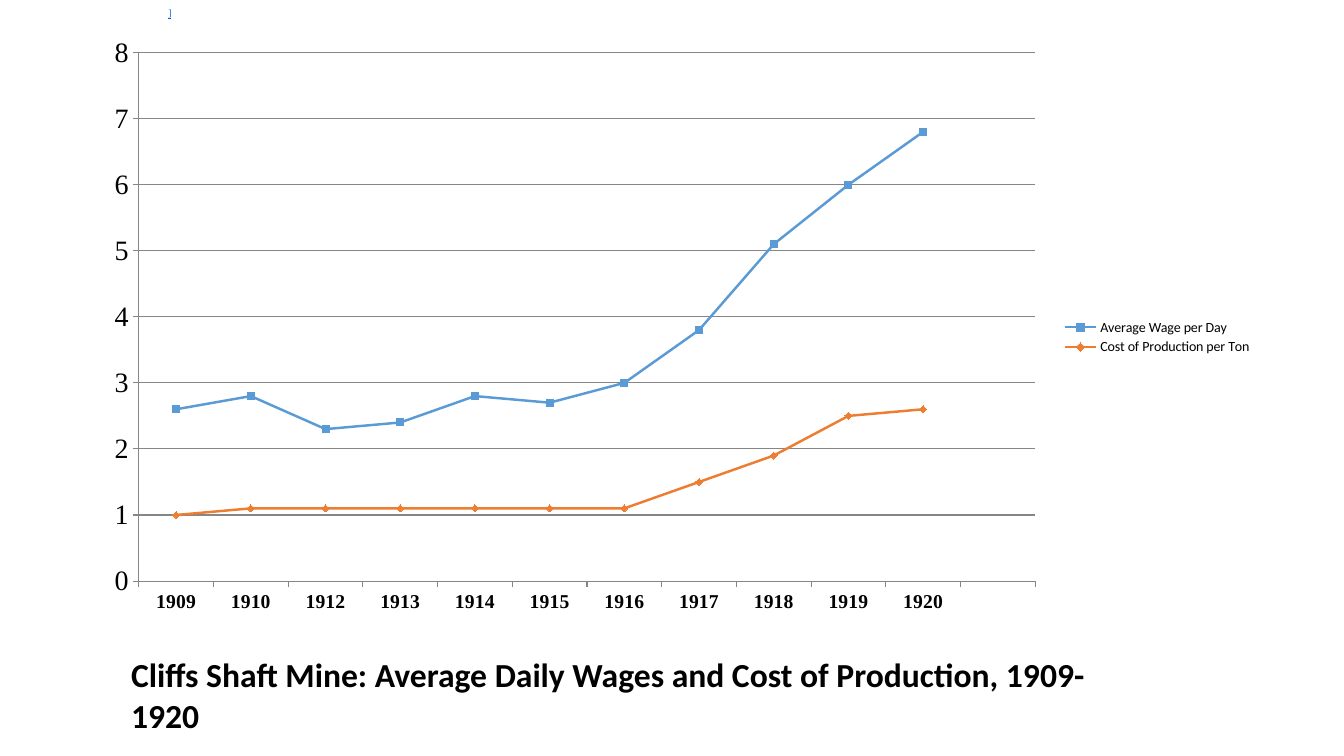
from lxml import etree
from pptx import Presentation
from pptx.chart.data import CategoryChartData
from pptx.dml.color import RGBColor
from pptx.enum.chart import XL_CHART_TYPE, XL_LEGEND_POSITION, XL_MARKER_STYLE, XL_TICK_MARK
from pptx.enum.text import MSO_ANCHOR, MSO_AUTO_SIZE, PP_ALIGN
from pptx.oxml.ns import qn
from pptx.util import Inches, Pt

LINE_MARKERS = XL_CHART_TYPE.LINE_MARKERS
LEGEND_RIGHT = XL_LEGEND_POSITION.RIGHT
SQUARE, DIAMOND = XL_MARKER_STYLE.SQUARE, XL_MARKER_STYLE.DIAMOND
TICK_OUTSIDE, TICK_NONE = XL_TICK_MARK.OUTSIDE, XL_TICK_MARK.NONE
TOP, MIDDLE = MSO_ANCHOR.TOP, MSO_ANCHOR.MIDDLE
LEFT = PP_ALIGN.LEFT
NO_AUTOFIT = MSO_AUTO_SIZE.NONE

COLORS = {
    name: RGBColor.from_string(value)
    for name, value in {
        "text": "000000",
        "link": "0563C1",
        "grid": "868686",
        "wage": "5B9BD5",
        "cost": "ED7D31",
    }.items()
}
SANS, SERIF = "Calibri", "Times New Roman"
YEARS = ["1909", *(str(year) for year in range(1912 - 2, 1921) if year != 1911), ""]
SERIES = [
    ("Average Wage per Day", "wage", SQUARE,
     [2.6, 2.8, 2.3, 2.4, 2.8, 2.7, 3, 3.8, 5.1, 6, 6.8, None]),
    ("Cost of Production per Ton", "cost", DIAMOND,
     [1, 1.1, 1.1, 1.1, 1.1, 1.1, 1.1, 1.5, 1.9, 2.5, 2.6, None]),
]
PLOT_LAYOUT = [
    ("layoutTarget", "inner"), ("xMode", "edge"), ("yMode", "edge"),
    ("x", 0.05), ("y", 0.044), ("w", 0.758), ("h", 0.847),
]


def set_font(font, name, size, color="text", bold=False):
    font.name = name
    font.size = Pt(size)
    font.bold = bold
    font.color.rgb = COLORS[color]


deck = Presentation()
deck.slide_width, deck.slide_height = Inches(13.33), Inches(7.5)
page = deck.slides.add_slide(deck.slide_layouts.get_by_name("Title Only"))

# Raised bracket at the top edge
box = page.shapes.add_textbox(Inches(1.67), 0, Inches(0.05), Inches(0.3))
frame = box.text_frame
frame.margin_left = frame.margin_right = frame.margin_top = frame.margin_bottom = 0
frame.vertical_anchor = MIDDLE
frame.word_wrap = False
span = frame.paragraphs[0].add_run()
span.text = "]"
set_font(span.font, SERIF, 12, "link")
span.font.underline = True
span.font._element.set("baseline", "30000")

# Line chart
data = CategoryChartData()
data.categories = YEARS
for name, _, _, values in SERIES:
    data.add_series(name, values)
chart = page.shapes.add_chart(
    LINE_MARKERS, Inches(0.79), Inches(0.25), Inches(11.73), Inches(6.19), data
).chart
set_font(chart.font, SANS, 10)
chart.has_title = False
chart.has_legend = True
chart.legend.position = LEGEND_RIGHT
chart.legend.include_in_layout = False
chart.plots[0].vary_by_categories = False

for series, (_, color, marker_style, _) in zip(chart.plots[0].series, SERIES):
    series.smooth = False
    series.format.line.width = Pt(1.75)
    series.format.line.color.rgb = COLORS[color]
    marker = series.marker
    marker.style = marker_style
    marker.size = 5
    marker.format.fill.solid()
    marker.format.fill.fore_color.rgb = COLORS[color]
    marker.format.line.color.rgb = COLORS[color]

value_axis, year_axis = chart.value_axis, chart.category_axis
value_axis.minimum_scale, value_axis.maximum_scale = 0, 8
value_axis.major_unit = 1
value_axis.has_major_gridlines = True
set_font(value_axis.tick_labels.font, SERIF, 20)
set_font(year_axis.tick_labels.font, SERIF, 14, bold=True)
for axis in (value_axis, year_axis):
    axis.major_tick_mark = TICK_OUTSIDE
    axis.minor_tick_mark = TICK_NONE
for ruled in (value_axis, year_axis, value_axis.major_gridlines):
    ruled.format.line.width = Pt(0.75)
    ruled.format.line.color.rgb = COLORS["grid"]

plot_area = chart._chartSpace.chart.plotArea
for old_layout in plot_area.findall(qn("c:layout")):
    plot_area.remove(old_layout)
layout = etree.Element(qn("c:layout"))
manual = etree.SubElement(layout, qn("c:manualLayout"))
for tag, value in PLOT_LAYOUT:
    etree.SubElement(manual, qn(f"c:{tag}")).set("val", str(value))
plot_area.insert(0, layout)

# Caption below the chart
title = page.shapes.title
title.left, title.top = Inches(1.2), Inches(6.44)
title.width, title.height = Inches(10), Inches(0.91)
title.text_frame.text = (
    "Cliffs Shaft Mine: Average Daily Wages and Cost of Production, 1909-1920"
)
title.text_frame.auto_size = NO_AUTOFIT
title.text_frame.word_wrap = True
title.text_frame.vertical_anchor = TOP
para = title.text_frame.paragraphs[0]
para.alignment = LEFT
set_font(para.font, SANS, 24, bold=True)

deck.save("out.pptx")
